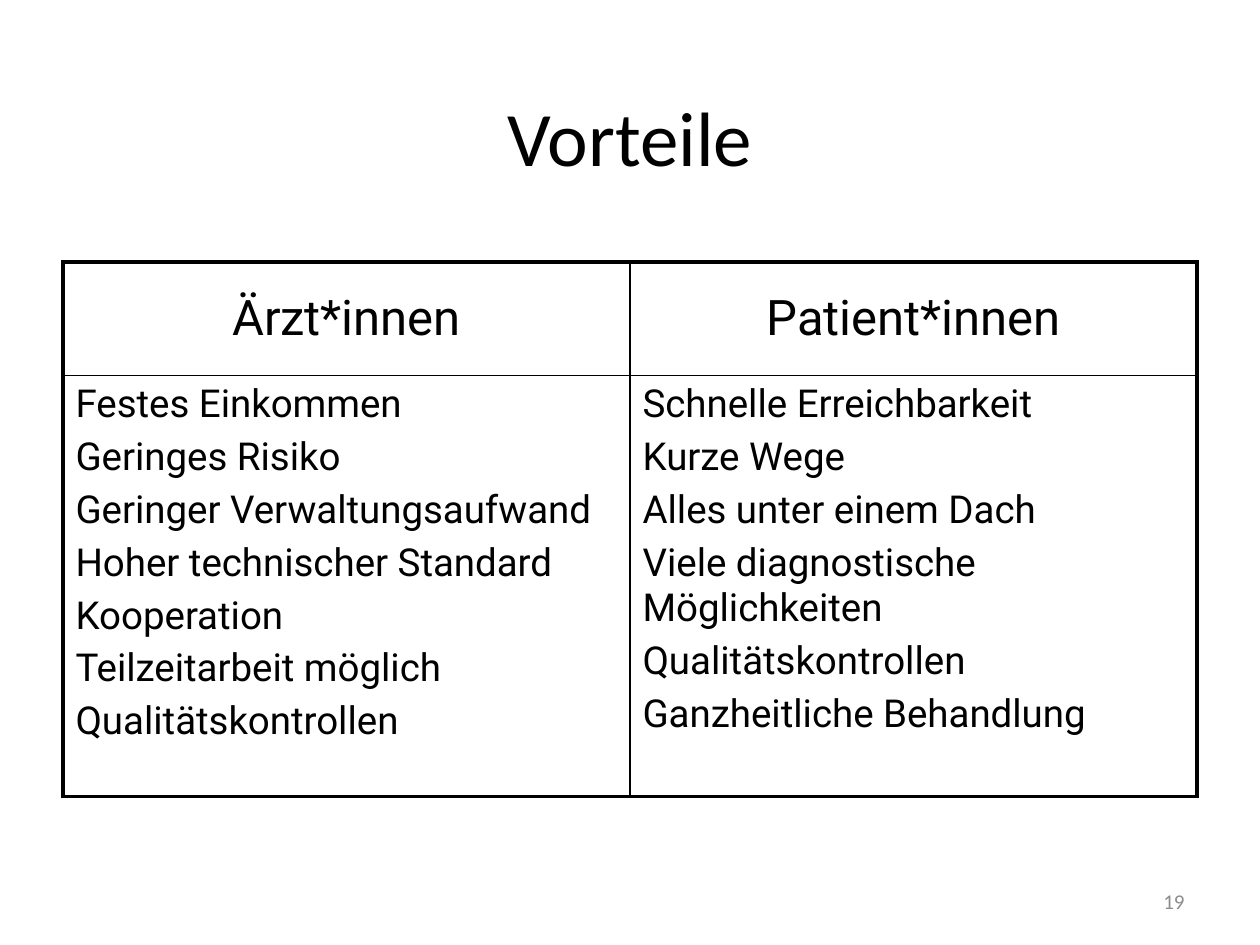
from dataclasses import dataclass

from lxml import etree
from pptx import Presentation
from pptx.dml.color import RGBColor
from pptx.enum import text
from pptx.oxml import ns
from pptx.util import Inches, Pt


@dataclass(frozen=True)
class Theme:
    ink: str = "000000"
    muted: str = "8C8C8C"
    heading_font: str = "Calibri"
    table_font: str = "Roboto"
    title_size: float = 44
    header_size: float = 28
    body_size: float = 22
    number_size: float = 12
    outer_line: float = 2.25
    inner_line: float = 1


THEME = Theme()
LEFT, CENTER, RIGHT = text.PP_ALIGN.LEFT, text.PP_ALIGN.CENTER, text.PP_ALIGN.RIGHT
MIDDLE, TOP = text.MSO_ANCHOR.MIDDLE, text.MSO_ANCHOR.TOP

ADVANTAGES = {
    "Ärzt*innen": [
        "Festes Einkommen",
        "Geringes Risiko",
        "Geringer Verwaltungsaufwand",
        "Hoher technischer Standard",
        "Kooperation",
        "Teilzeitarbeit möglich",
        "Qualitätskontrollen",
    ],
    "Patient*innen": [
        "Schnelle Erreichbarkeit",
        "Kurze Wege",
        "Alles unter einem Dach",
        "Viele diagnostische Möglichkeiten",
        "Qualitätskontrollen",
        "Ganzheitliche Behandlung",
    ],
}


def write(tf, lines, size, font, color=THEME.ink, align=LEFT, gap=0):
    """Write one paragraph per line; gap is space before as a share of the size."""
    tf.word_wrap = True
    for i, line in enumerate(lines):
        p = tf.paragraphs[0] if i == 0 else tf.add_paragraph()
        p.alignment = align
        p.space_before = Pt(size * gap)
        r = p.add_run()
        r.text = line
        r.font.size = Pt(size)
        r.font.name = font
        r.font.color.rgb = RGBColor.from_string(color)


def set_borders(cell, widths):
    tc_pr = cell._tc.get_or_add_tcPr()
    for side, width in widths.items():
        ln = etree.SubElement(tc_pr, ns.qn(f"a:ln{side}"), w=str(Pt(width)))
        fill = etree.SubElement(ln, ns.qn("a:solidFill"))
        etree.SubElement(fill, ns.qn("a:srgbClr"), val=THEME.ink)


def add_title(s, box, title):
    sp = s.shapes.title
    sp.left, sp.top, sp.width, sp.height = box
    sp.text_frame.vertical_anchor = MIDDLE
    write(sp.text_frame, [title], THEME.title_size, THEME.heading_font, align=CENTER)


def add_comparison(s, box, columns, header_height):
    left, top, width, height = box
    table = s.shapes.add_table(2, len(columns), *box).table
    table.first_row = table.horz_banding = False
    table.rows[0].height = header_height
    table.rows[1].height = height - header_height
    last = len(columns) - 1
    for col, (header, points) in enumerate(columns.items()):
        table.columns[col].width = width // len(columns)
        for row, lines in enumerate(([header], points)):
            cell = table.cell(row, col)
            is_header = row == 0
            on_edge = {"L": col == 0, "R": col == last, "T": is_header, "B": not is_header}
            set_borders(cell, {side: THEME.outer_line if edge else THEME.inner_line
                               for side, edge in on_edge.items()})
            cell.fill.background()
            cell.vertical_anchor = MIDDLE if is_header else TOP
            write(cell.text_frame, lines,
                  THEME.header_size if is_header else THEME.body_size,
                  THEME.table_font, align=CENTER if is_header else LEFT, gap=0.2)


def add_page_number(s, box, number):
    tf = s.shapes.add_textbox(*box).text_frame
    tf.vertical_anchor = MIDDLE
    write(tf, [number], THEME.number_size, THEME.heading_font, THEME.muted, RIGHT)


def main():
    prs = Presentation()
    prs.slide_width, prs.slide_height = Inches(10), Inches(7.5)
    s = prs.slides.add_slide(prs.slide_layouts[5])
    margin, content_width = Inches(0.5), Inches(9)
    add_title(s, (margin, Inches(0.32), content_width, Inches(1.51)), "Vorteile")
    add_comparison(s, (margin, Inches(2.08), content_width, Inches(4.24)),
                   ADVANTAGES, Inches(0.9))
    add_page_number(s, (Inches(7.17), Inches(6.95), Inches(2.33), Inches(0.4)), "19")
    prs.save("out.pptx")


if __name__ == "__main__":
    main()
